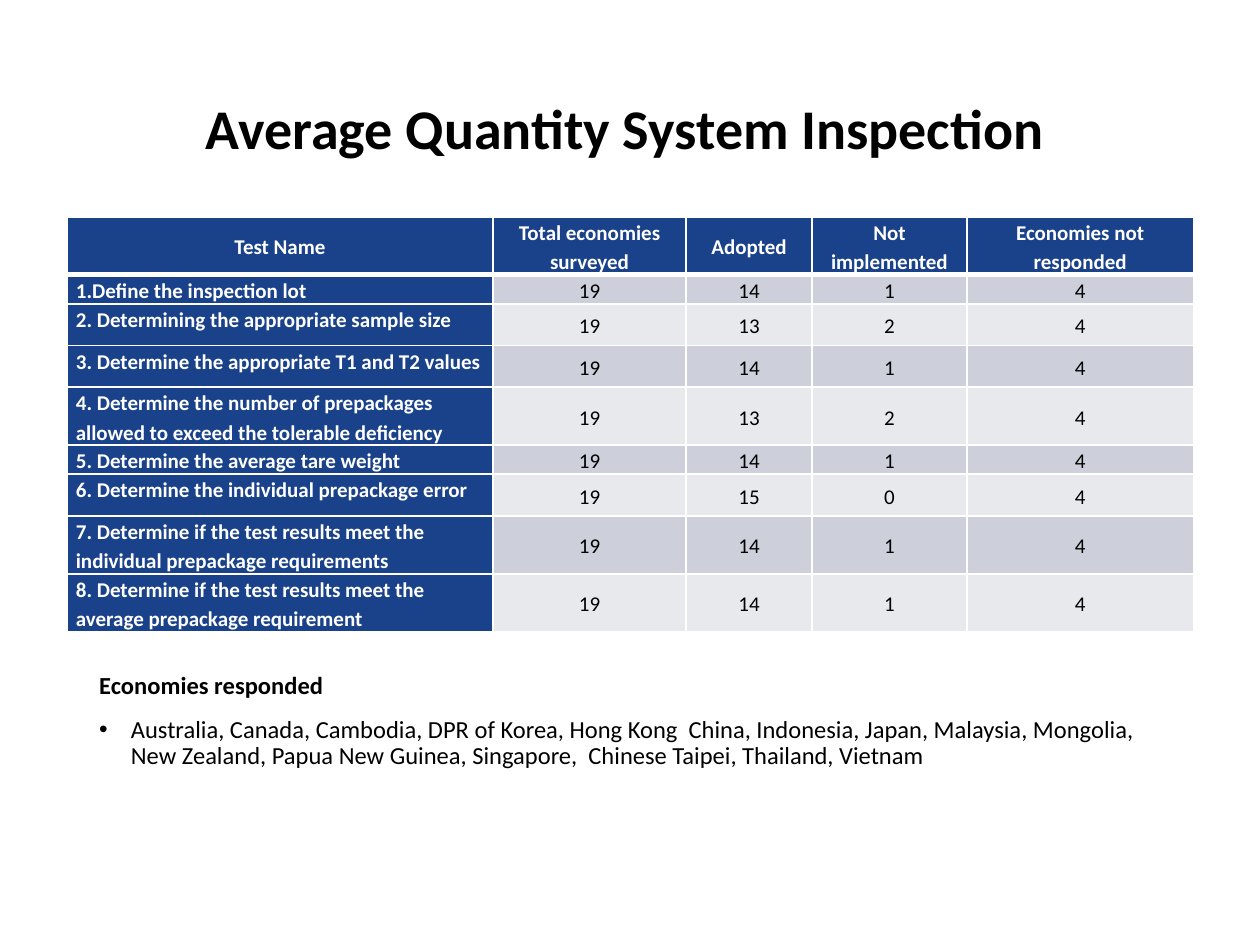
from dataclasses import dataclass
from typing import Any

from lxml import etree
from pptx import Presentation
from pptx import util as u
from pptx.dml.color import RGBColor
from pptx.enum import text
from pptx.oxml import ns

MID, TOP = text.MSO_ANCHOR.MIDDLE, text.MSO_ANCHOR.TOP
LEFT, CENTER = text.PP_ALIGN.LEFT, text.PP_ALIGN.CENTER


@dataclass(frozen=True)
class Theme:
    font: str = "Calibri"
    navy: str = "1A428A"
    bands: tuple = ("CDCFDA", "E8E9ED")
    white: str = "FFFFFF"
    black: str = "000000"
    title: int = 32
    body: int = 14
    cell: int = 12
    thin: int = 1
    thick: int = 3


@dataclass(frozen=True)
class Test:
    name: str
    height: float
    counts: tuple  # surveyed, adopted, not implemented, not responded


THEME = Theme()
LOW, HALF, TALL = 0.53, 0.84, 1.12  # row heights in cm
WIDTHS = (8.59, 3.89, 2.54, 3.12, 4.57)
HEADS = ("Test Name", "Total economies surveyed", "Adopted",
         "Not implemented", "Economies not responded")
TESTS = (
    Test("1.Define the inspection lot", LOW, (19, 14, 1, 4)),
    Test("2. Determining the appropriate sample size", HALF, (19, 13, 2, 4)),
    Test("3. Determine the appropriate T1 and T2 values", HALF, (19, 14, 1, 4)),
    Test("4. Determine the number of prepackages allowed to exceed "
         "the tolerable deficiency", TALL, (19, 13, 2, 4)),
    Test("5. Determine the average tare weight", LOW, (19, 14, 1, 4)),
    Test("6. Determine the individual prepackage error", HALF, (19, 15, 0, 4)),
    Test("7. Determine if the test results meet the individual "
         "prepackage requirements", TALL, (19, 14, 1, 4)),
    Test("8. Determine if the test results meet the average "
         "prepackage requirement", TALL, (19, 14, 1, 4)),
)
LANDS = ("Australia, Canada, Cambodia, DPR of Korea, Hong Kong  China, "
         "Indonesia, Japan, Malaysia, Mongolia, New Zealand, Papua New Guinea, "
         "Singapore,  Chinese Taipei, Thailand, Vietnam")


def apply(item: Any, values: dict) -> None:
    for key, value in values.items():
        setattr(item, key, value)


def write(para: Any, words: str, size: int, color: str, bold: bool,
          **form: Any) -> None:
    apply(para, form)
    run = para.add_run()
    run.text = words
    apply(run.font, {"name": THEME.font, "size": u.Pt(size), "bold": bold})
    run.font.color.rgb = RGBColor.from_string(color)


def add_box(slide: Any, place: tuple, anchor: Any) -> Any:
    frame = slide.shapes.add_textbox(*map(u.Cm, place)).text_frame
    apply(frame, {"word_wrap": True, "vertical_anchor": anchor})
    return frame


def add_bullet(para: Any) -> None:
    props = para._p.get_or_add_pPr()
    apply_indent = {"marL": str(u.Cm(0.64)), "indent": str(-u.Cm(0.64))}
    for key, value in apply_indent.items():
        props.set(key, value)
    etree.SubElement(props, ns.qn("a:buFont"), typeface="Arial")
    etree.SubElement(props, ns.qn("a:buChar"), char="•")


def add_edges(cell: Any, top: int, base: int) -> None:
    props = cell._tc.get_or_add_tcPr()
    sides = {"L": THEME.thin, "R": THEME.thin, "T": top, "B": base}
    for side, width in sides.items():
        line = etree.SubElement(props, ns.qn(f"a:ln{side}"), w=str(u.Pt(width)))
        fill = etree.SubElement(line, ns.qn("a:solidFill"))
        etree.SubElement(fill, ns.qn("a:srgbClr"), val=THEME.white)


def fill_cell(cell: Any, words: str, row: int, col: int) -> None:
    head, name = row == 0, col == 0
    navy = head or name
    add_edges(cell, THEME.thick if row == 1 else THEME.thin,
              THEME.thick if head else THEME.thin)
    cell.fill.solid()
    shade = THEME.navy if navy else THEME.bands[(row - 1) % 2]
    cell.fill.fore_color.rgb = RGBColor.from_string(shade)
    side = name and not head
    apply(cell, {"margin_left": u.Cm(0.18), "margin_right": u.Cm(0.18),
                 "margin_top": 0, "margin_bottom": 0,
                 "vertical_anchor": TOP if side else MID})
    write(cell.text_frame.paragraphs[0], words, THEME.cell,
          THEME.white if navy else THEME.black, navy,
          alignment=LEFT if side else CENTER, line_spacing=1.15,
          space_after=u.Pt(6))


def add_grid(slide: Any) -> None:
    tall = (TALL, *(test.height for test in TESTS))
    lines = (HEADS, *((test.name, *test.counts) for test in TESTS))
    place = (1.35, 4.37, sum(WIDTHS), sum(tall))
    table = slide.shapes.add_table(len(lines), len(HEADS),
                                   *map(u.Cm, place)).table
    for col, width in zip(table.columns, WIDTHS):
        col.width = u.Cm(width)
    for row, height in zip(table.rows, tall):
        row.height = u.Cm(height)
    for row, line in enumerate(lines):
        for col, words in enumerate(line):
            fill_cell(table.cell(row, col), str(words), row, col)


def main() -> None:
    deck = Presentation()
    apply(deck, {"slide_width": u.Cm(25.4), "slide_height": u.Cm(19.05)})
    slide = deck.slides.add_slide(deck.slide_layouts[6])

    # Title
    frame = add_box(slide, (1.78, 1.37, 21.9, 2.54), MID)
    write(frame.paragraphs[0], "Average Quantity System Inspection ",
          THEME.title, THEME.black, True, alignment=CENTER, line_spacing=0.9)

    # Survey table
    add_grid(slide)

    # Economies that responded
    frame = add_box(slide, (1.75, 13.44, 21.62, 2.6), TOP)
    write(frame.paragraphs[0], "Economies responded",
          THEME.body, THEME.black, True, line_spacing=0.9)
    para = frame.add_paragraph()
    apply(para, {"line_spacing": 0.9, "space_before": u.Pt(10)})
    add_bullet(para)
    write(para, LANDS, THEME.body, THEME.black, False)

    deck.save("out.pptx")


if __name__ == "__main__":
    main()
